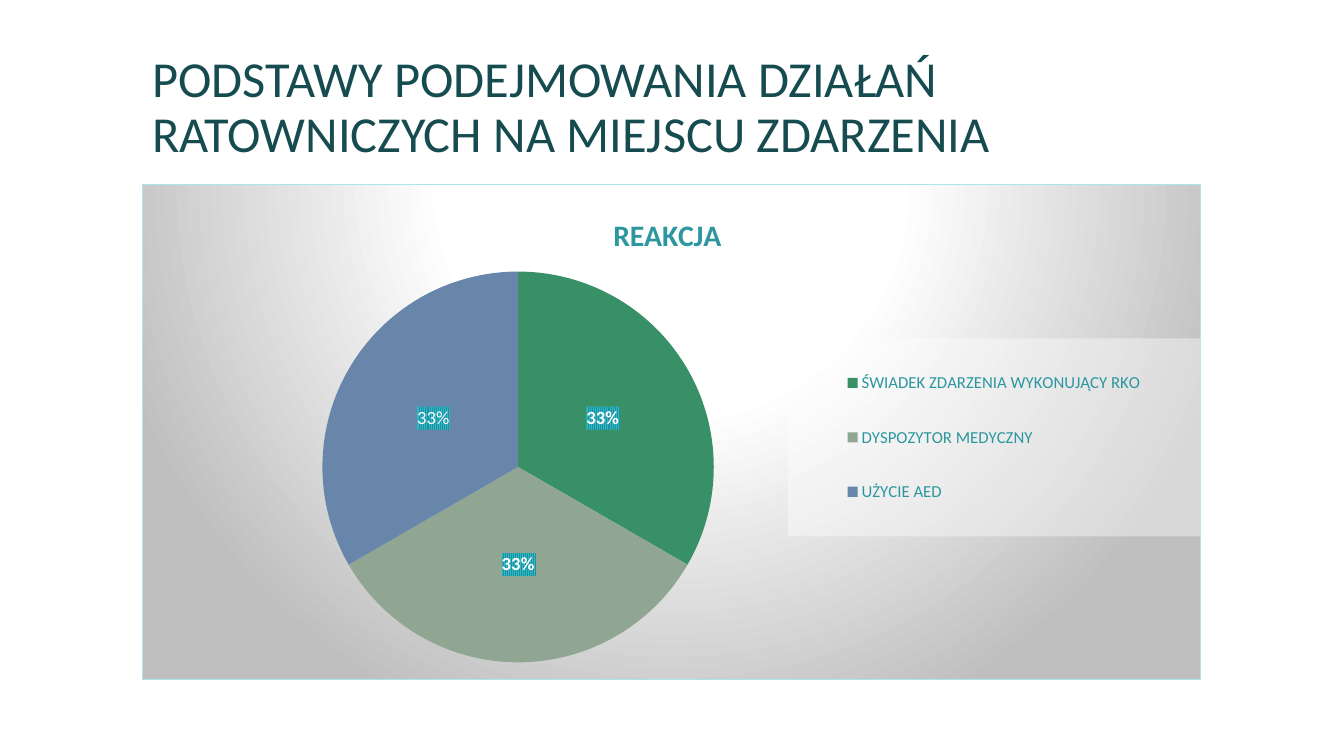
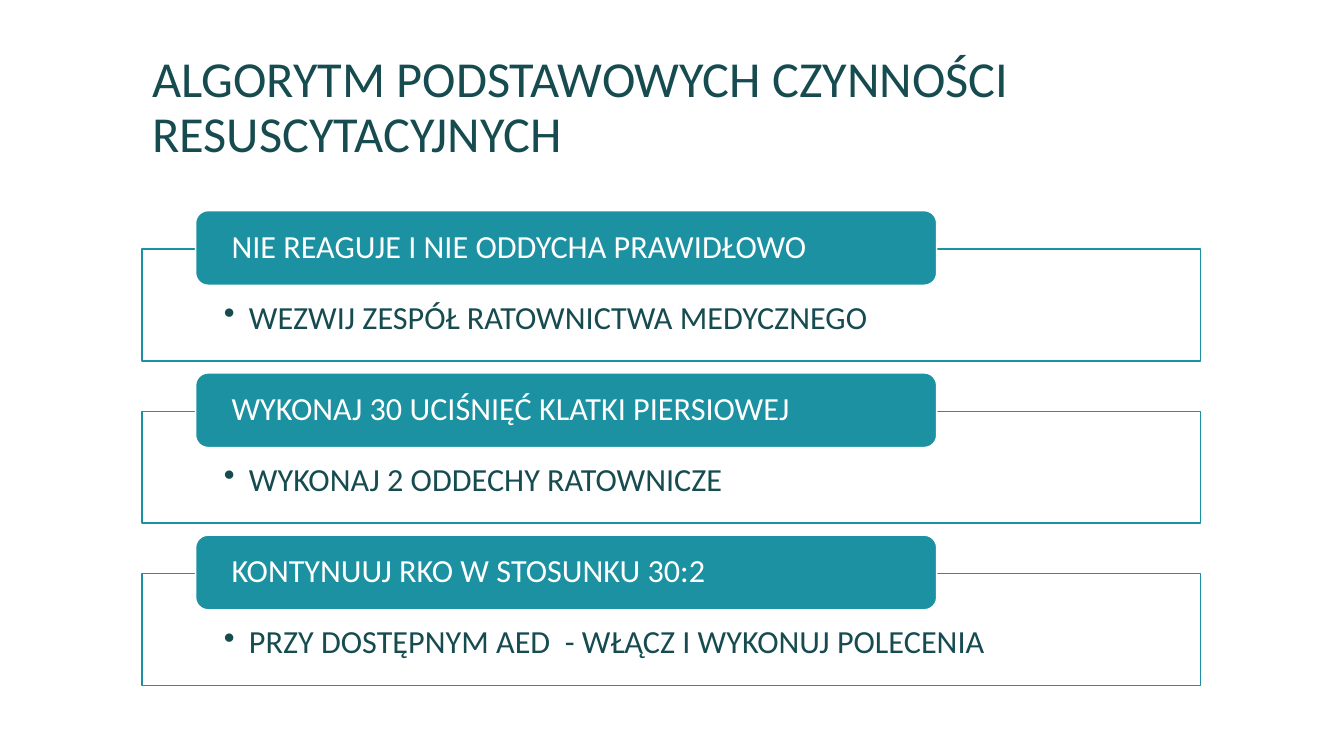
from lxml import etree
from pptx import Presentation
from pptx.chart.data import CategoryChartData
from pptx.dml.color import RGBColor
from pptx.enum.chart import XL_CHART_TYPE, XL_LABEL_POSITION, XL_LEGEND_POSITION
from pptx.enum.shapes import MSO_SHAPE
from pptx.enum.text import MSO_ANCHOR, MSO_AUTO_SIZE, PP_ALIGN
from pptx.oxml import parse_xml
from pptx.oxml.ns import nsdecls, qn
from pptx.util import Inches, Pt

FONT = "Calibri"
DARK = RGBColor(0x16, 0x4B, 0x4F)
TEAL = RGBColor(0x1B, 0x91, 0xA1)
CHART_TEAL = RGBColor(0x2C, 0x97, 0x9F)
LABEL_TEAL = RGBColor(0x31, 0xB6, 0xC4)
PALE_TEAL = RGBColor(0xAF, 0xE5, 0xE9)
WHITE = RGBColor(0xFF, 0xFF, 0xFF)
GREY = RGBColor(0xBF, 0xBF, 0xBF)
SLICES = [
    ("ŚWIADEK ZDARZENIA WYKONUJĄCY RKO", 33, RGBColor(0x38, 0x90, 0x66)),
    ("DYSPOZYTOR MEDYCZNY", 33, RGBColor(0x90, 0xA6, 0x93)),
    ("UŻYCIE AED", 33, RGBColor(0x67, 0x86, 0xA9)),
]
STEPS = [
    ("NIE REAGUJE I NIE ODDYCHA PRAWIDŁOWO", "WEZWIJ ZESPÓŁ RATOWNICTWA MEDYCZNEGO"),
    ("WYKONAJ 30 UCIŚNIĘĆ KLATKI PIERSIOWEJ", "WYKONAJ 2 ODDECHY RATOWNICZE"),
    ("KONTYNUUJ RKO W STOSUNKU 30:2", "PRZY DOSTĘPNYM AED  - WŁĄCZ I WYKONUJ POLECENIA"),
]
LEFT, WIDTH = 1.41, 10.5
STEP_TOP, STEP_PITCH = 2.09, 1.61

LABEL_FILL = (
    f'<a:pattFill prst="narVert"><a:fgClr><a:srgbClr val="{TEAL}"/></a:fgClr>'
    f'<a:bgClr><a:srgbClr val="{LABEL_TEAL}"/></a:bgClr></a:pattFill>'
)
LEGEND_FILL = (
    f'<a:solidFill><a:srgbClr val="{WHITE}"><a:alpha val="40000"/></a:srgbClr></a:solidFill>'
)
CHART_FILL = (
    '<a:gradFill><a:gsLst>'
    f'<a:gs pos="0"><a:srgbClr val="{WHITE}"/></a:gs>'
    f'<a:gs pos="39000"><a:srgbClr val="{WHITE}"/></a:gs>'
    f'<a:gs pos="100000"><a:srgbClr val="{GREY}"/></a:gs></a:gsLst>'
    '<a:path path="circle"><a:fillToRect l="50000" t="-80000" r="50000" b="180000"/></a:path>'
    '</a:gradFill>'
    f'<a:ln w="9525"><a:solidFill><a:srgbClr val="{PALE_TEAL}"/></a:solidFill></a:ln>'
)


def style_font(font, size, color, bold=False):
    font.name, font.size, font.bold = FONT, Pt(size), bold
    font.color.rgb = color


def write(frame, text, size=23, color=DARK, bold=False, bullet=False,
          align=PP_ALIGN.LEFT, line_spacing=0.9):
    para = frame.paragraphs[0]
    para.alignment, para.line_spacing = align, line_spacing
    if bullet:
        properties = para._p.get_or_add_pPr()
        properties.set("marL", str(Inches(0.25)))
        properties.set("indent", str(Inches(-0.25)))
        etree.SubElement(properties, qn("a:buChar")).set("char", "•")
    span = para.add_run()
    span.text = text
    style_font(span.font, size, color, bold)


def set_insets(frame, left, top, right, bottom):
    frame.margin_left, frame.margin_top = Inches(left), Inches(top)
    frame.margin_right, frame.margin_bottom = Inches(right), Inches(bottom)


def add_page(deck, layout, title):
    page = deck.slides.add_slide(layout)
    frame = page.shapes.title.text_frame
    frame.word_wrap, frame.auto_size = True, MSO_AUTO_SIZE.NONE
    frame.vertical_anchor = MSO_ANCHOR.BOTTOM
    write(frame, title, size=36)
    return page


def add_box(page, preset, left, top, width, height, fill, line):
    box = page.shapes.add_shape(
        preset, Inches(left), Inches(top), Inches(width), Inches(height))
    box.shadow.inherit = False
    box.fill.solid()
    box.fill.fore_color.rgb = fill
    box.line.color.rgb, box.line.width = line, Pt(1)
    box.text_frame.word_wrap = True
    return box


def add_step(page, top, heading, action):
    body = add_box(page, MSO_SHAPE.RECTANGLE, LEFT, top + 0.38, WIDTH, 1.11, WHITE, TEAL)
    body.text_frame.vertical_anchor = MSO_ANCHOR.TOP
    set_insets(body.text_frame, 0.81, 0.52, 0.81, 0.18)
    write(body.text_frame, action, bullet=True)

    tab = add_box(page, MSO_SHAPE.ROUNDED_RECTANGLE, LEFT + 0.53, top, 7.35, 0.74, TEAL, WHITE)
    tab.text_frame.vertical_anchor = MSO_ANCHOR.MIDDLE
    set_insets(tab.text_frame, 0.32, 0, 0.32, 0)
    write(tab.text_frame, heading, color=WHITE)


def chart_part_style(content):
    return parse_xml(f'<c:spPr {nsdecls("c", "a")}>{content}</c:spPr>')


def place_chart_part(part, index, inner=False, **fractions):
    """Put a manual layout, in fractions of the chart, at a child index of the part."""
    for old in part.findall(qn("c:layout")):
        part.remove(old)
    layout = etree.Element(qn("c:layout"))
    manual = etree.SubElement(layout, qn("c:manualLayout"))
    if inner:
        etree.SubElement(manual, qn("c:layoutTarget")).set("val", "inner")
    for axis in "xy":
        etree.SubElement(manual, qn(f"c:{axis}Mode")).set("val", "edge")
    for name, value in fractions.items():
        etree.SubElement(manual, qn(f"c:{name}")).set("val", str(value))
    part.insert(index, layout)


def add_slice_labels(plot):
    plot.has_data_labels = False
    series = plot.series[0]
    labels = series.data_labels
    labels.show_percentage, labels.show_value = True, False
    labels.number_format, labels.number_format_is_linked = "0%", False
    labels.position = XL_LABEL_POSITION.CENTER
    style_font(labels.font, 13.3, WHITE, bold=True)
    labels._element.find(qn("c:txPr")).addprevious(chart_part_style(LABEL_FILL))

    last = series.points[len(SLICES) - 1].data_label
    write(last.text_frame, "33%", size=13.3, color=WHITE,
          align=PP_ALIGN.CENTER, line_spacing=1.0)
    last.position = XL_LABEL_POSITION.CENTER
    text = labels._element.find(qn("c:dLbl")).find(qn("c:tx"))
    text.addnext(chart_part_style(LABEL_FILL))


def add_reaction_chart(page):
    data = CategoryChartData()
    data.categories = [name for name, _, _ in SLICES]
    data.add_series("Series 1", [value for _, value, _ in SLICES])
    chart = page.shapes.add_chart(
        XL_CHART_TYPE.PIE, Inches(LEFT), Inches(1.83), Inches(WIDTH), Inches(4.92), data).chart
    style_font(chart.font, 10, DARK)

    plot = chart.plots[0]
    plot.vary_by_categories = True
    for index, (_, _, color) in enumerate(SLICES):
        fill = plot.series[0].points[index].format.fill
        fill.solid()
        fill.fore_color.rgb = color
    add_slice_labels(plot)

    chart.has_title = True
    write(chart.chart_title.text_frame, "REAKCJA", size=21.3, color=CHART_TEAL, bold=True,
          align=PP_ALIGN.CENTER, line_spacing=1.0)

    chart.has_legend = True
    legend = chart.legend
    legend.position, legend.include_in_layout = XL_LEGEND_POSITION.RIGHT, False
    style_font(legend.font, 12, CHART_TEAL)

    space = chart.element.find(qn("c:chart"))
    legend_part = space.find(qn("c:legend"))
    place_chart_part(space.find(qn("c:title")), 1, x=0.44, y=0.05)
    place_chart_part(space.find(qn("c:plotArea")), 0, inner=True, x=0.17, y=0.17, w=0.37, h=0.8)
    place_chart_part(legend_part, 1, x=0.61, y=0.31, w=0.39, h=0.4)
    legend_part.find(qn("c:txPr")).addprevious(chart_part_style(LEGEND_FILL))
    space.addnext(chart_part_style(CHART_FILL))


def main():
    deck = Presentation()
    deck.slide_width, deck.slide_height = Inches(13.33), Inches(7.5)
    layout = deck.slide_layouts.get_by_name("Title Only")
    title = layout.placeholders[0]
    title.left, title.top = Inches(LEFT), Inches(0.42)
    title.width, title.height = Inches(WIDTH), Inches(1.25)

    page = add_page(deck, layout, "PODSTAWY PODEJMOWANIA DZIAŁAŃ RATOWNICZYCH NA MIEJSCU ZDARZENIA")
    add_reaction_chart(page)

    page = add_page(deck, layout, "ALGORYTM PODSTAWOWYCH CZYNNOŚCI RESUSCYTACYJNYCH")
    for index, (heading, action) in enumerate(STEPS):
        add_step(page, STEP_TOP + index * STEP_PITCH, heading, action)

    deck.save("out.pptx")


if __name__ == "__main__":
    main()
